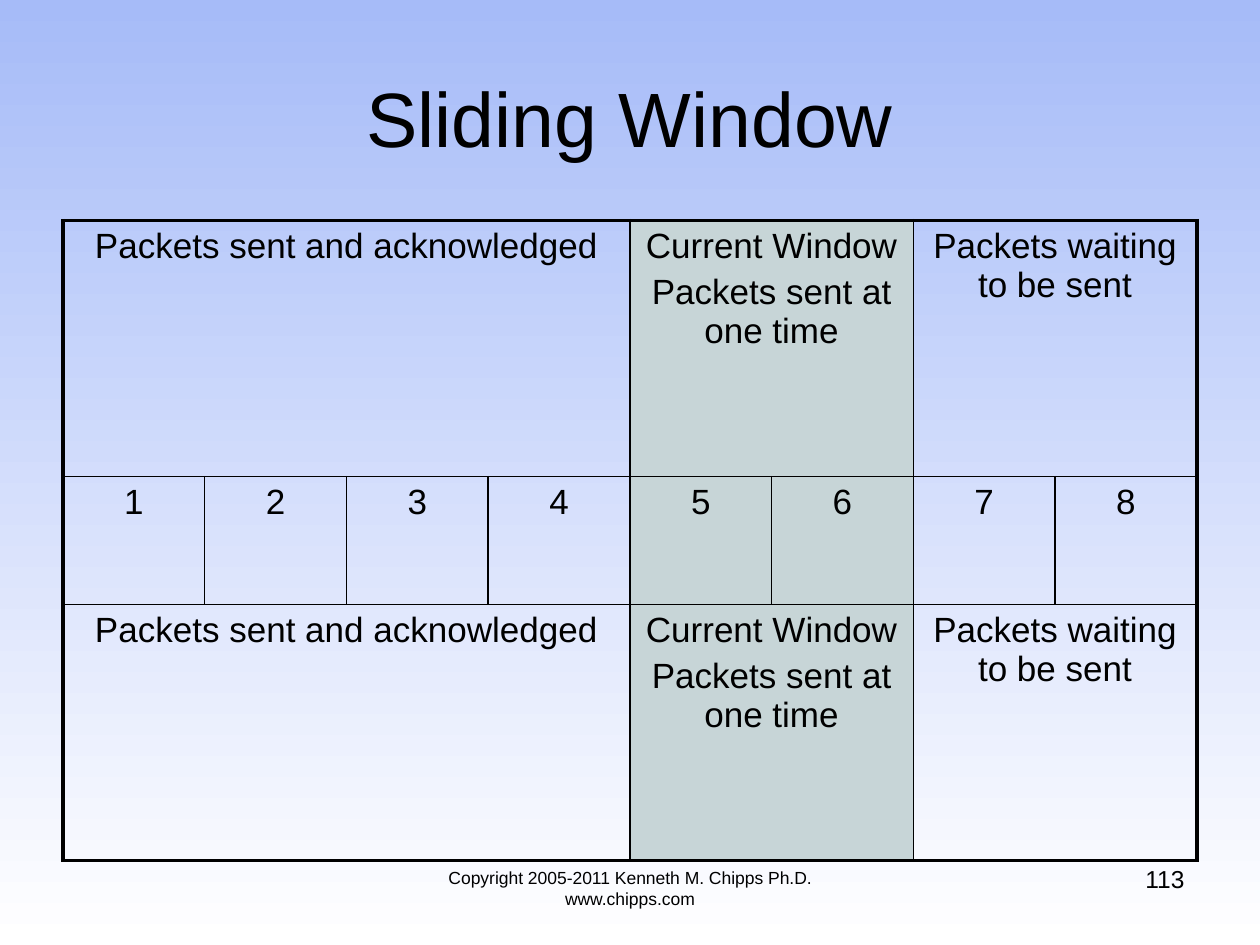
from lxml import etree
from pptx import Presentation
from pptx.dml.color import RGBColor
from pptx.enum.text import MSO_ANCHOR, PP_ALIGN
from pptx.oxml.ns import qn
from pptx.util import Inches, Pt

CENTER, RIGHT = PP_ALIGN.CENTER, PP_ALIGN.RIGHT
TOP, MIDDLE = MSO_ANCHOR.TOP, MSO_ANCHOR.MIDDLE
WIDTH, HEIGHT = 10, 7.5
MARGIN = 0.05 * WIDTH
BLACK, WINDOW_FILL = "000000", "C7D5D7"
OUTER, INNER = 2.25, 1
COLUMNS, ROW_SHARES = 8, (2, 1, 2)
GROUPS = (
    (0, 4, ("Packets sent and acknowledged",)),
    (4, 2, ("Current Window", "Packets sent at one time")),
    (6, 2, ("Packets waiting to be sent",)),
)
WINDOW_COLUMNS = (4, 5)


def color(value):
    """Turn a hex string into a colour."""
    return RGBColor.from_string(value)


def write(frame, lines, size, align, space=0):
    """Write one paragraph per line into a text frame."""
    for index, line in enumerate(lines):
        paragraph = frame.add_paragraph() if index else frame.paragraphs[0]
        paragraph.alignment = align
        paragraph.space_before = Pt(space)
        run = paragraph.add_run()
        run.text = line
        run.font.size = Pt(size)
        run.font.name = "Arial"
        run.font.color.rgb = color(BLACK)


def add_text(slide, box, line, size, align, anchor=TOP):
    """Place a wrapped text box."""
    frame = slide.shapes.add_textbox(*map(Inches, box)).text_frame
    frame.word_wrap = True
    frame.vertical_anchor = anchor
    write(frame, [line], size, align)


def set_borders(cell, widths):
    """Draw the left, right, top and bottom borders of a cell."""
    properties = cell._tc.get_or_add_tcPr()
    for side, width in zip("LRTB", widths):
        line = etree.SubElement(properties, qn(f"a:ln{side}"), w=str(Pt(width)))
        fill = etree.SubElement(line, qn("a:solidFill"))
        etree.SubElement(fill, qn("a:srgbClr"), val=BLACK)


def fill_region(table, row, column, span, lines):
    """Style a run of cells as one region, merge it and write its text."""
    edges = (column == 0, column + span == COLUMNS,
             row == 0, row == len(ROW_SHARES) - 1)
    widths = [OUTER if edge else INNER for edge in edges]
    for offset in range(span):
        cell = table.cell(row, column + offset)
        set_borders(cell, widths)
        if column in WINDOW_COLUMNS:
            cell.fill.solid()
            cell.fill.fore_color.rgb = color(WINDOW_FILL)
        else:
            cell.fill.background()
    first = table.cell(row, column)
    if span > 1:
        first.merge(table.cell(row, column + span - 1))
    write(first.text_frame, lines, 20, CENTER, space=4)


def add_packet_table(slide, box):
    """Place the packet numbers between two rows of group labels."""
    frame = slide.shapes.add_table(len(ROW_SHARES), COLUMNS, *map(Inches, box))
    table = frame.table
    table.first_row = table.horz_banding = False
    for column in table.columns:
        column.width = Inches(box[2] / COLUMNS)
    for row, share in zip(table.rows, ROW_SHARES):
        row.height = Inches(box[3] * share / sum(ROW_SHARES))
    for row in (0, 2):
        for column, span, lines in GROUPS:
            fill_region(table, row, column, span, lines)
    for column in range(COLUMNS):
        fill_region(table, 1, column, 1, [str(column + 1)])


def set_background(slide):
    """Fill the slide from blue at the top to white at the bottom."""
    fill = slide.background.fill
    fill.gradient()
    fill.gradient_angle = 270
    for stop, value, position in zip(fill.gradient_stops, ("A6BBF8", "FFFFFF"), (0, 1)):
        stop.color.rgb = color(value)
        stop.position = position


def add_footer(slide, box):
    """Place the copyright in the middle and the page number at the right."""
    left, top, width, height = box
    add_text(slide, (WIDTH * 0.3, top, WIDTH * 0.4, height),
             "Copyright 2005-2011 Kenneth M. Chipps Ph.D. www.chipps.com", 10, CENTER)
    number_width = 2.33
    add_text(slide, (left + width - number_width, top - 0.02, number_width, height),
             "113", 14, RIGHT)


def main():
    """Build and save the slide."""
    presentation = Presentation()
    presentation.slide_width, presentation.slide_height = Inches(WIDTH), Inches(HEIGHT)
    slide = presentation.slides.add_slide(presentation.slide_layouts[6])
    width = WIDTH - 2 * MARGIN
    set_background(slide)
    add_text(slide, (MARGIN, 0.3, width, 1.25), "Sliding Window", 44, CENTER, MIDDLE)
    add_packet_table(slide, (MARGIN, 1.75, width, 5.08))
    add_footer(slide, (MARGIN, 6.83, width, 0.52))
    presentation.save("out.pptx")


if __name__ == "__main__":
    main()
